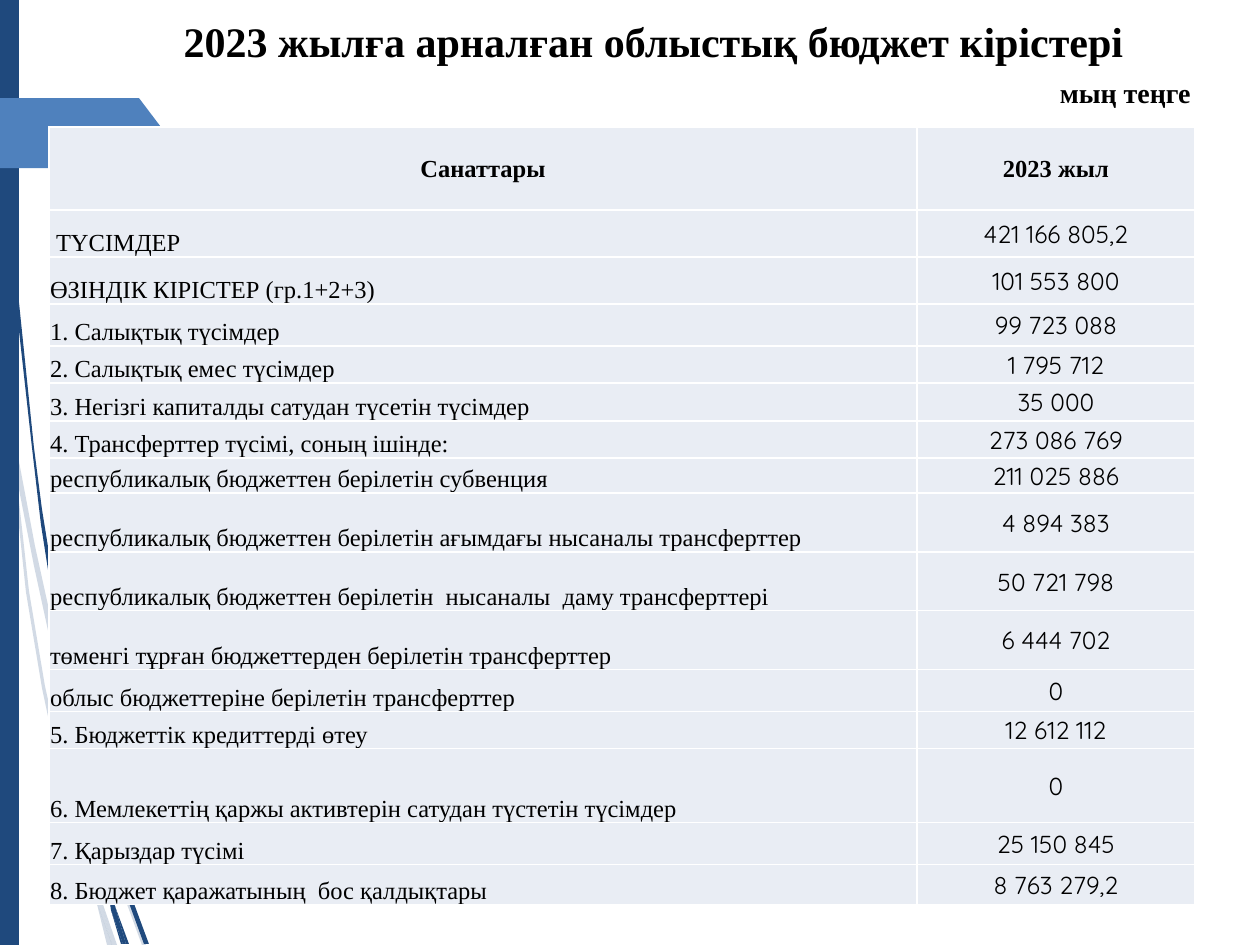
from lxml import etree
from pptx import Presentation
from pptx.dml.color import RGBColor
from pptx.enum.shapes import MSO_SHAPE
from pptx.enum.text import MSO_ANCHOR, MSO_AUTO_SIZE, PP_ALIGN
from pptx.oxml import parse_xml
from pptx.oxml.ns import nsdecls, qn
from pptx.util import Pt

PX = 7257  # EMU in one px, at 126 px to the inch
LEFT, CENTER, RIGHT = PP_ALIGN.LEFT, PP_ALIGN.CENTER, PP_ALIGN.RIGHT
MIDDLE, BOTTOM = MSO_ANCHOR.MIDDLE, MSO_ANCHOR.BOTTOM
SERIF, SANS = "Times New Roman", "Quicksand"
COLORS = {"navy": "1F497D", "blue": "4F81BD", "cell": "E9EDF4",
          "text": "000000", "border": "FFFFFF"}


def write(frame, text, size=14, font=SERIF, bold=False, align=LEFT):
    paragraph = frame.paragraphs[0]
    paragraph.alignment = align
    run = paragraph.add_run()
    run.text = text
    run.font.size = Pt(size)
    run.font.name = font
    run.font.bold = bold
    run.font.color.rgb = RGBColor.from_string(COLORS["text"])
    return run


def paint(shape, color, opacity=100):
    shape.shadow.inherit = False
    shape.line.fill.background()
    shape.fill.solid()
    shape.fill.fore_color.rgb = RGBColor.from_string(COLORS[color])
    if opacity < 100:
        tint = shape.fill._xPr.find(qn("a:solidFill"))[0]
        etree.SubElement(tint, qn("a:alpha"), val=str(opacity * 1000))


deck = Presentation()
deck.slide_width, deck.slide_height = 1260 * PX, 945 * PX
slide = deck.slides.add_slide(deck.slide_layouts[5])
shapes = slide.shapes

# Curved wisps along the left edge
pale_wisps = [
    [(54, 658), (79, 755), (81, 738), (59, 655), (35, 546), (14, 435), (16, 474), (34, 566)],
    [(87, 765), (83, 751), (83, 769), (116, 874), (142, 945), (146, 945), (120, 872)],
    [(112, 945), (117, 945), (100, 896)],
    [(88, 861), (66, 780), (45, 686), (29, 591), (16, 474), (10, 441), (26, 592),
     (42, 688), (62, 782), (87, 873), (96, 900), (93, 891)],
    [(96, 900), (107, 945), (112, 945)],
    [(91, 872), (88, 861), (93, 891), (96, 900), (112, 945), (100, 896)],
]
navy_wisps = [
    [(6, 139), (15, 294), (32, 447), (41, 524), (53, 601), (54, 606), (52, 571),
     (42, 509), (34, 447), (18, 292), (8, 137), (4, 60), (4, 0), (3, 0), (3, 60)],
    [(107, 818), (103, 808), (105, 827), (125, 892), (144, 944), (149, 944), (129, 890)],
    [(126, 944), (129, 944), (115, 906)],
    [(111, 910), (121, 944), (123, 944)],
    [(110, 890), (104, 871), (110, 903), (111, 910), (123, 944), (126, 944), (115, 906)],
]
ribbon = [(0, 98), (139, 98), (164, 131), (164, 136), (140, 168), (0, 168)]

outlines = [(wisp, "navy", 20) for wisp in pale_wisps]
outlines += [(wisp, "navy", 100) for wisp in navy_wisps]
outlines.append((ribbon, "blue", 100))
for points, color, opacity in outlines:
    if points is ribbon:
        # Side bar, under the ribbon
        paint(shapes.add_shape(MSO_SHAPE.RECTANGLE, 0, 0, 19 * PX, 945 * PX), "navy")
    builder = shapes.build_freeform(*points[0], scale=PX)
    builder.add_line_segments(points[1:], close=True)
    paint(builder.convert_to_shape(), color, opacity)

# Revenue table: category, amount, row height
revenues = [
    ("Санаттары", "2023 жыл", 83),
    ("ТҮСІМДЕР", "421 166 805,2", 47),
    ("ӨЗІНДІК КІРІСТЕР (гр.1+2+3)", "101 553 800", 47),
    ("1. Салықтық түсімдер", "99 723 088", 42),
    ("2. Салықтық емес түсімдер", "1 795 712", 37),
    ("3. Негізгі капиталды сатудан түсетін түсімдер", "35 000", 38),
    ("4. Трансферттер түсімі, соның ішінде:", "273 086 769", 37),
    ("республикалық бюджеттен берілетін субвенция", "211 025 886", 35),
    ("республикалық бюджеттен берілетін ағымдағы нысаналы трансферттер", "4 894 383", 59),
    ("республикалық бюджеттен берілетін  нысаналы  даму трансферттері", "50 721 798", 59),
    ("төменгі тұрған бюджеттерден берілетін трансферттер", "6 444 702", 59),
    ("облыс бюджеттеріне берілетін трансферттер", "0", 42),
    ("5. Бюджеттік кредиттерді өтеу", "12 612 112", 37),
    ("6. Мемлекеттің қаржы активтерін сатудан түстетін түсімдер", "0", 74),
    ("7. Қарыздар түсімі", "25 150 845", 42),
    ("8. Бюджет қаражатының  бос қалдықтары", "8 763 279,2", 40),
]
table_height = sum(height for _, _, height in revenues)
table = shapes.add_table(len(revenues), 2, 49 * PX, 127 * PX,
                         1146 * PX, table_height * PX).table
table.first_row = table.horz_banding = False
table.columns[0].width, table.columns[1].width = 868 * PX, 278 * PX

for row, (category, amount, height) in enumerate(revenues):
    table.rows[row].height = height * PX
    header = row == 0
    for column, text in enumerate((category, amount)):
        cell = table.cell(row, column)
        is_label = column == 0 and not header
        cell.margin_left = cell.margin_right = cell.margin_top = PX
        cell.margin_bottom = 0
        if row == 1 and is_label:
            cell.margin_left = 7 * PX
        cell.vertical_anchor = BOTTOM if is_label else MIDDLE
        write(cell.text_frame, text, bold=header,
              font=SERIF if header or is_label else SANS,
              align=LEFT if is_label else CENTER)
        properties = cell._tc.get_or_add_tcPr()
        for side in ("lnL", "lnR", "lnT", "lnB"):
            properties.append(parse_xml(
                f'<a:{side} {nsdecls("a")} w="12700"><a:solidFill>'
                f'<a:srgbClr val="{COLORS["border"]}"/></a:solidFill></a:{side}>'))
        cell.fill.solid()
        cell.fill.fore_color.rgb = RGBColor.from_string(COLORS["cell"])

# Title with a soft text shadow
title = shapes.title
title.left, title.top, title.width, title.height = 49 * PX, 9 * PX, 1162 * PX, 63 * PX
title.text_frame.auto_size = MSO_AUTO_SIZE.SHAPE_TO_FIT_TEXT
heading = write(title.text_frame, "2023 жылға арналған облыстық бюджет кірістері",
                size=24, bold=True, align=CENTER)
title.text_frame.paragraphs[0]._p.get_or_add_pPr().set("indent", str(47 * PX))
heading._r.rPr.find(qn("a:solidFill")).addnext(parse_xml(
    f'<a:effectLst {nsdecls("a")}><a:outerShdw blurRad="38100" dist="38100" dir="2700000">'
    f'<a:srgbClr val="{COLORS["text"]}"><a:alpha val="43000"/></a:srgbClr>'
    '</a:outerShdw></a:effectLst>'))

# Unit of measure
unit = shapes.add_textbox(984 * PX, 69 * PX, 219 * PX, 47 * PX).text_frame
unit.word_wrap = True
unit.auto_size = MSO_AUTO_SIZE.SHAPE_TO_FIT_TEXT
write(unit, "мың теңге", size=16, bold=True, align=RIGHT)

deck.save("out.pptx")
